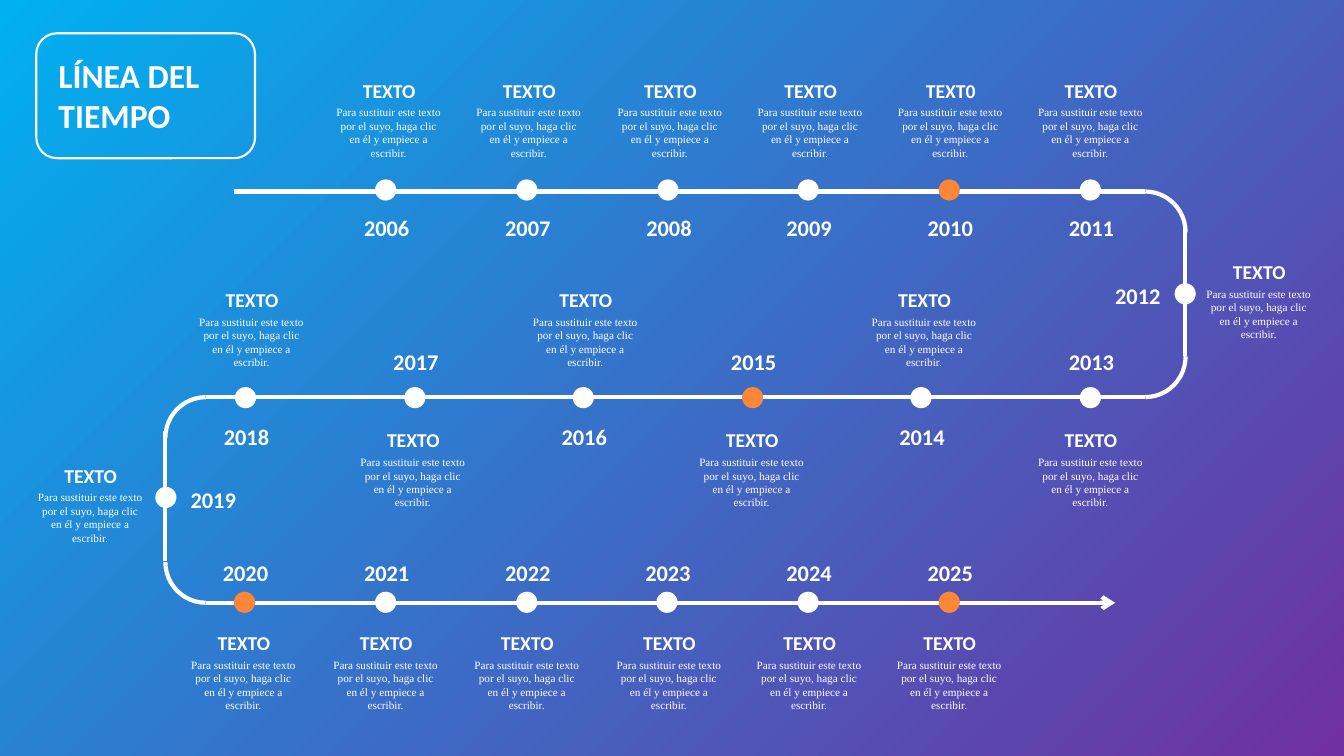
from dataclasses import dataclass
from typing import Iterator

from lxml.etree import SubElement
from pptx import Presentation
from pptx.dml.color import RGBColor
from pptx.enum.shapes import MSO_CONNECTOR, MSO_SHAPE
from pptx.enum.text import MSO_ANCHOR, MSO_AUTO_SIZE, PP_ALIGN
from pptx.oxml.ns import qn
from pptx.shapes.autoshape import Shape
from pptx.slide import Slide
from pptx.util import Emu, Pt

EMU_PER_PX = 9144  # 100 px to the inch
WHITE = RGBColor(0xFF, 0xFF, 0xFF)
ORANGE = RGBColor(0xFE, 0x86, 0x37)
SKY = RGBColor(0x00, 0xB0, 0xF0)
PURPLE = RGBColor(0x70, 0x30, 0xA0)

DOT_SIZE = 21
YEAR_OFFSET = -25
BEND_WIDTH, BEND_HEIGHT = 80, 81
HIGHLIGHTED_YEARS = {2010, 2015, 2020, 2025}
HEADINGS = {2010: "TEXT0"}
DESCRIPTION = "Para sustituir este texto por el suyo, haga clic en él y empiece a escribir."


@dataclass(frozen=True)
class Milestone:
    year: int
    dot: tuple[int, int]
    year_at: tuple[int, int]
    caption_at: tuple[int, int]


@dataclass(frozen=True)
class Row:
    """Evenly spaced milestones, left to right; the tops are taken in turn."""
    years: range
    first_dot: int
    last_dot: int
    dot_top: int
    year_tops: tuple[int, ...]
    caption_tops: tuple[int, ...]
    caption_lefts: tuple[int, ...]


@dataclass(frozen=True)
class Track:
    start: tuple[int, int]
    end: tuple[int, int]
    arrow: bool = False


@dataclass(frozen=True)
class Bend:
    left: int
    top: int
    flips: tuple[str, ...] = ()


ROWS = [
    Row(range(2006, 2012), 372, 1071, 178, (208,), (73,),
        (322, 461, 601, 740, 879, 1018)),
    Row(range(2018, 2012, -1), 233, 1071, 384, (415, 340), (281, 420),
        (186, 346, 517, 682, 853, 1018)),
    Row(range(2020, 2026), 232, 931, 587, (550,), (621,),
        (178, 319, 459, 600, 739, 878)),
]
TURNS = [
    Milestone(2012, (1165, 281), (1092, 275), (1185, 253)),
    Milestone(2019, (154, 483), (175, 477), (26, 455)),
]
TRACKS = [
    Track((232, 190), (1136, 190)),
    Track((1175, 224), (1175, 353)),
    Track((1136, 394), (204, 394)),
    Track((164, 428), (164, 557)),
    Track((204, 598), (1088, 598)),
    Track((1082, 598), (1106, 598), arrow=True),
]
BENDS = [
    Bend(1096, 190),
    Bend(1096, 313, ("flipV",)),
    Bend(164, 394, ("flipH",)),
    Bend(164, 517, ("flipH", "flipV")),
]


def px(length: int) -> Emu:
    return Emu(length * EMU_PER_PX)


def row_milestones(row: Row) -> Iterator[Milestone]:
    gaps = len(row.years) - 1
    for i, year in enumerate(row.years):
        dot_left = row.first_dot + round((row.last_dot - row.first_dot) * i / gaps)
        yield Milestone(
            year,
            (dot_left, row.dot_top),
            (dot_left + YEAR_OFFSET, row.year_tops[i % len(row.year_tops)]),
            (row.caption_lefts[i], row.caption_tops[i % len(row.caption_tops)]),
        )


def write(box: Shape, text: str, *, size: int, font: str = "Calibri",
          bold: bool = True, align: PP_ALIGN = PP_ALIGN.CENTER) -> None:
    frame = box.text_frame
    frame.word_wrap = True
    frame.auto_size = MSO_AUTO_SIZE.SHAPE_TO_FIT_TEXT
    frame.vertical_anchor = MSO_ANCHOR.TOP
    paragraph = frame.paragraphs[0]
    paragraph.alignment = align
    run = paragraph.add_run()
    run.text = text
    run.font.name = font
    run.font.size = Pt(size)
    run.font.bold = bold
    run.font.color.rgb = WHITE


def add_outline(slide: Slide, kind: MSO_SHAPE, left: int, top: int,
                width: int, height: int, weight: float) -> Shape:
    outline = slide.shapes.add_shape(kind, px(left), px(top), px(width), px(height))
    outline.shadow.inherit = False
    outline.fill.background()
    outline.line.color.rgb = WHITE
    outline.line.width = Pt(weight)
    return outline


def add_track(slide: Slide, track: Track) -> None:
    line = slide.shapes.add_connector(
        MSO_CONNECTOR.STRAIGHT, *map(px, track.start + track.end))
    line.line.color.rgb = WHITE
    line.line.width = Pt(3)
    properties = line.element.spPr
    if track.arrow:
        SubElement(properties.find(qn("a:ln")), qn("a:tailEnd"), type="arrow")
    SubElement(properties, qn("a:effectLst"))


def add_bend(slide: Slide, bend: Bend) -> None:
    arc = add_outline(slide, MSO_SHAPE.ARC, bend.left, bend.top,
                      BEND_WIDTH, BEND_HEIGHT, 3)
    for flip in bend.flips:
        arc.element.spPr.find(qn("a:xfrm")).set(flip, "1")


def add_milestone(slide: Slide, milestone: Milestone) -> None:
    dot = slide.shapes.add_shape(
        MSO_SHAPE.FLOWCHART_CONNECTOR, *map(px, milestone.dot),
        px(DOT_SIZE), px(DOT_SIZE))
    dot.shadow.inherit = False
    dot.fill.solid()
    dot.fill.fore_color.rgb = ORANGE if milestone.year in HIGHLIGHTED_YEARS else WHITE
    dot.line.fill.background()

    year = slide.shapes.add_textbox(*map(px, milestone.year_at), px(73), px(37))
    write(year, str(milestone.year), size=16)

    left, top = milestone.caption_at
    heading = slide.shapes.add_textbox(px(left), px(top), px(128), px(33))
    write(heading, HEADINGS.get(milestone.year, "TEXTO"), size=14)
    description = slide.shapes.add_textbox(px(left), px(top + 27), px(127), px(63))
    write(description, DESCRIPTION, size=8, font="Times New Roman", bold=False)


def paint_background(slide: Slide) -> None:
    fill = slide.background.fill
    fill.gradient()
    fill.gradient_angle = 315
    for stop, color in zip(fill.gradient_stops, (SKY, PURPLE)):
        stop.color.rgb = color


def add_title(slide: Slide) -> None:
    add_outline(slide, MSO_SHAPE.ROUNDED_RECTANGLE, 36, 33, 217, 124, 1.5)
    title = slide.shapes.title
    title.left, title.top, title.width, title.height = map(px, (48, 49, 194, 90))
    write(title, "LÍNEA DEL TIEMPO", size=24, align=PP_ALIGN.LEFT)


def main() -> None:
    presentation = Presentation()
    presentation.slide_width, presentation.slide_height = px(1333), px(750)
    slide = presentation.slides.add_slide(presentation.slide_layouts[5])
    paint_background(slide)
    add_title(slide)
    for track in TRACKS:
        add_track(slide, track)
    for bend in BENDS:
        add_bend(slide, bend)
    for row in ROWS:
        for milestone in row_milestones(row):
            add_milestone(slide, milestone)
    for milestone in TURNS:
        add_milestone(slide, milestone)
    presentation.save("out.pptx")


if __name__ == "__main__":
    main()
